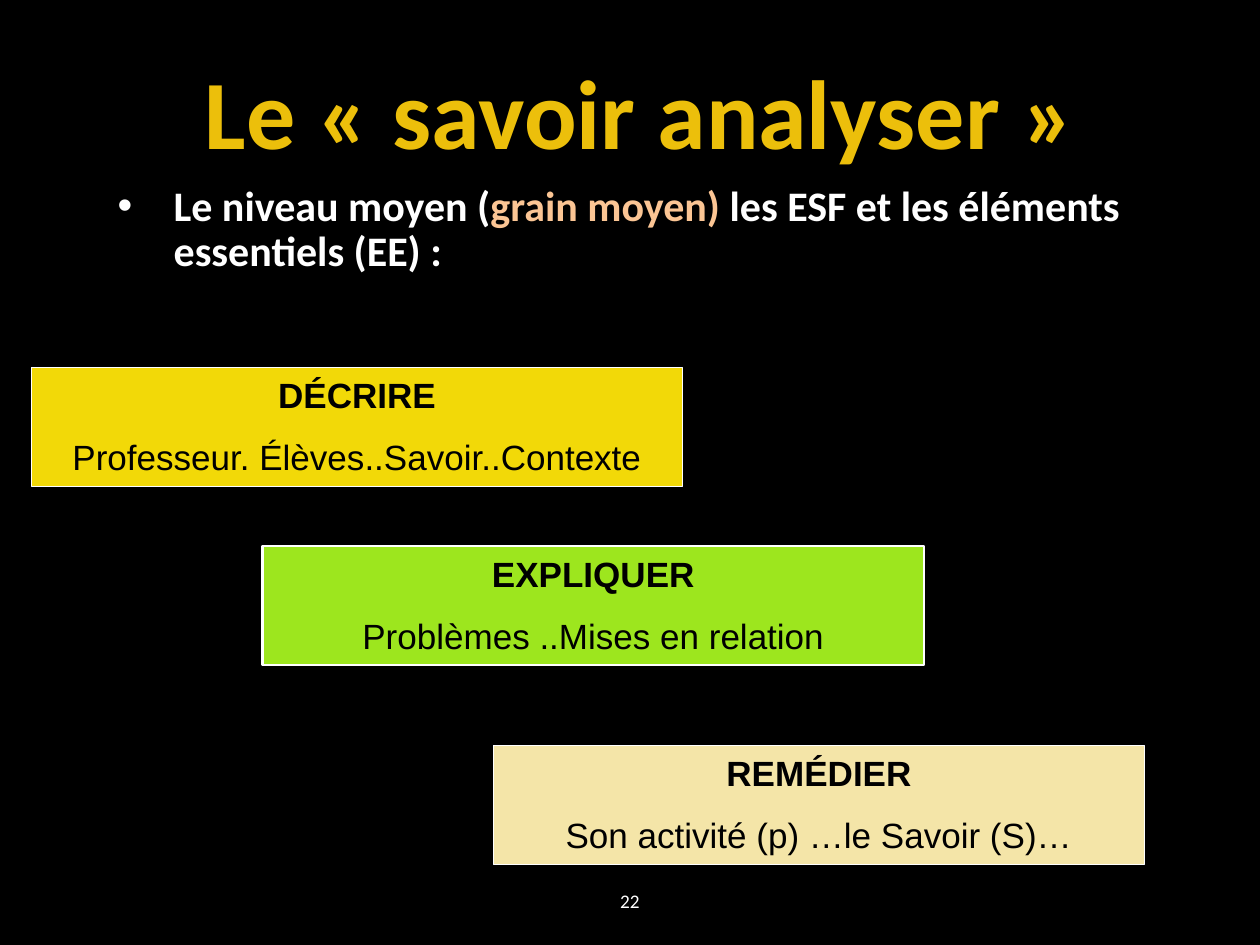
from lxml import etree
from pptx import Presentation
from pptx.dml.color import RGBColor
from pptx.enum.shapes import MSO_SHAPE
from pptx.enum.text import MSO_ANCHOR, MSO_AUTO_SIZE, PP_ALIGN
from pptx.oxml.ns import qn
from pptx.util import Pt

CENTER = PP_ALIGN.CENTER
LEFT = PP_ALIGN.LEFT
MIDDLE = MSO_ANCHOR.MIDDLE
TOP = MSO_ANCHOR.TOP
NO_FIT = MSO_AUTO_SIZE.NONE
RECT = MSO_SHAPE.RECTANGLE

COLORS = {
    "background": "000000",
    "title": "ECBF0B",
    "text": "FFFFFF",
    "accent": "FBC594",
    "step_text": "000000",
    "describe": "F2D908",
    "explain": "9DE61E",
    "remedy": "F4E5A8",
}


class SlideBuilder:
    heading_font = "Calibri"
    step_font = "Arial"

    def __init__(self, prs):
        self.slide = prs.slides.add_slide(prs.slide_layouts[1])
        fill = self.slide.background.fill
        fill.solid()
        fill.fore_color.rgb = self.color("background")

    def color(self, name):
        return RGBColor.from_string(COLORS[name])

    def place(self, sp, left, top, width, height):
        sp.left, sp.top = Pt(left), Pt(top)
        sp.width, sp.height = Pt(width), Pt(height)

    def frame(self, sp, anchor):
        tf = sp.text_frame
        tf.word_wrap = True
        tf.auto_size = NO_FIT
        tf.vertical_anchor = anchor
        return tf

    def format_run(self, r, font, size, color, bold=False):
        r.font.name = font
        r.font.size = Pt(size)
        r.font.bold = bold
        r.font.color.rgb = self.color(color)

    def title(self, text, box):
        sp = self.slide.shapes.title
        self.place(sp, *box)
        p = self.frame(sp, MIDDLE).paragraphs[0]
        p.text = text
        p.alignment = CENTER
        self.format_run(p.runs[0], self.heading_font, 56, "title", True)

    def bullet(self, parts, box):
        sp = self.slide.placeholders[1]
        self.place(sp, *box)
        p = self.frame(sp, TOP).paragraphs[0]
        pPr = p._p.get_or_add_pPr()
        pPr.set("marL", str(Pt(32)))
        pPr.set("indent", str(-Pt(32)))
        etree.SubElement(pPr, qn("a:buFont")).set("typeface", "Arial")
        etree.SubElement(pPr, qn("a:buChar")).set("char", "•")
        p.alignment = LEFT
        p.line_spacing = 0.9
        p.space_before = Pt(0)
        for text, color in parts:
            r = p.add_run()
            r.text = text
            self.format_run(r, self.heading_font, 24, color, True)

    def step(self, heading, detail, fill, box, line_width):
        sp = self.slide.shapes.add_shape(RECT, *map(Pt, box))
        sp.shadow.inherit = False
        sp.fill.solid()
        sp.fill.fore_color.rgb = self.color(fill)
        sp.line.color.rgb = self.color("text")
        sp.line.width = Pt(line_width)
        tf = self.frame(sp, TOP)
        tf.text = f"{heading}\n{detail}"
        for i, p in enumerate(tf.paragraphs):
            p.alignment = CENTER
            p.space_before = Pt(11.5 * i)
            self.format_run(p.runs[0], self.step_font, 20, "step_text", i == 0)

    def page_number(self, number, box):
        sp = self.slide.shapes.add_textbox(*map(Pt, box))
        p = self.frame(sp, MIDDLE).paragraphs[0]
        p.text = str(number)
        p.alignment = CENTER
        self.format_run(p.runs[0], self.heading_font, 11, "text")


def main():
    prs = Presentation()
    prs.slide_width, prs.slide_height = Pt(720), Pt(540)
    s = SlideBuilder(prs)

    # Title and introduction
    s.title("Le «\u00a0savoir analyser\u00a0»", (60, 18, 612, 90))
    s.bullet([
        ("Le niveau moyen (", "text"),
        ("grain moyen) ", "accent"),
        ("les ESF et les éléments essentiels (EE) :", "text"),
    ], (60, 102, 612, 84))

    # Page number
    s.page_number(22, (330, 500.5, 60, 28.5))

    # Staircase of steps, each one shifted right by the same amount
    steps = [
        ("DÉCRIRE", "Professeur. Élèves..Savoir..Contexte", "describe", 210, 372, 1),
        ("EXPLIQUER", "Problèmes ..Mises en relation", "explain", 312, 378, 1.5),
        ("REMÉDIER", "Son activité (p) …le Savoir (S)…", "remedy", 426, 372, 1),
    ]
    for i, (heading, detail, fill, top, width, line_width) in enumerate(steps):
        s.step(heading, detail, fill, (18 + 132 * i, top, width, 68), line_width)

    prs.save("out.pptx")


if __name__ == "__main__":
    main()
